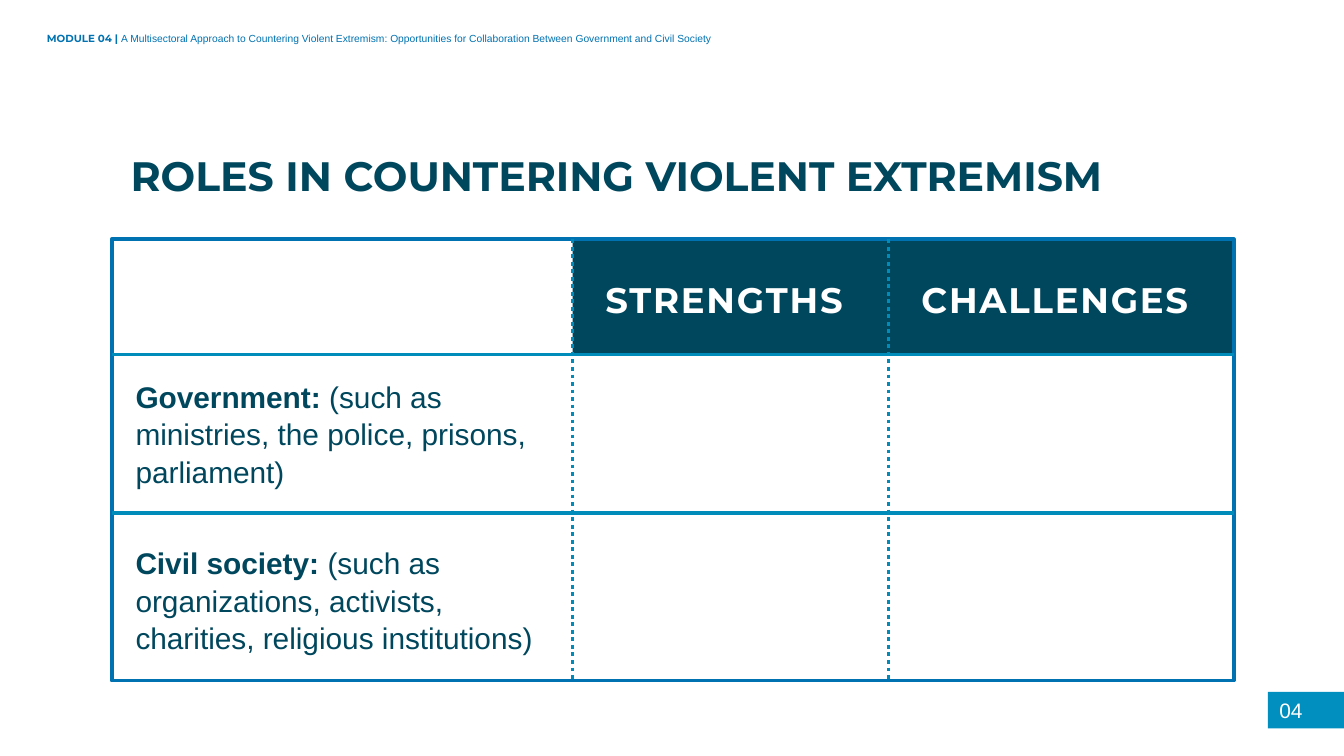
from dataclasses import dataclass

from lxml import etree
from pptx import Presentation
from pptx.dml.color import RGBColor
from pptx.enum.dml import MSO_LINE
from pptx.enum.shapes import MSO_CONNECTOR, MSO_SHAPE
from pptx.enum.text import MSO_ANCHOR, MSO_AUTO_SIZE
from pptx.oxml.ns import qn
from pptx.util import Pt

RECTANGLE = MSO_SHAPE.RECTANGLE
STRAIGHT = MSO_CONNECTOR.STRAIGHT
DOTTED = MSO_LINE.ROUND_DOT
TOP, BOTTOM = MSO_ANCHOR.TOP, MSO_ANCHOR.BOTTOM
GROW = MSO_AUTO_SIZE.SHAPE_TO_FIT_TEXT


@dataclass(frozen=True)
class Theme:
    """Colours, fonts and type sizes of the slide."""
    navy: str = "00475D"
    blue: str = "0072B1"
    teal: str = "008CBA"
    badge: str = "008FBE"
    white: str = "FFFFFF"
    heading_font: str = "Montserrat"
    body_font: str = "Arial"
    title_size: float = 22
    column_size: float = 19
    role_size: float = 16
    number_size: float = 11.2
    module_size: float = 5.5
    rule_width: float = 2


THEME = Theme()


def add_rectangle(slide, box, fill=None, outline=None):
    """Add a plain rectangle with a fill, an outline or both."""
    rectangle = slide.shapes.add_shape(RECTANGLE, *map(Pt, box))
    rectangle.shadow.inherit = False
    if fill:
        rectangle.fill.solid()
        rectangle.fill.fore_color.rgb = RGBColor.from_string(fill)
    else:
        rectangle.fill.background()
    if outline:
        rectangle.line.color.rgb = RGBColor.from_string(outline)
        rectangle.line.width = Pt(THEME.rule_width)
    else:
        rectangle.line.fill.background()


def add_rule(slide, start, end, dash=None):
    """Add a straight rule between two points."""
    rule = slide.shapes.add_connector(STRAIGHT, *map(Pt, (*start, *end)))
    rule.line.color.rgb = RGBColor.from_string(THEME.teal)
    rule.line.width = Pt(THEME.rule_width)
    if dash:
        rule.line.dash_style = dash
    etree.SubElement(rule._element.spPr, qn("a:effectLst"))


def add_text(slide, box, text, *, size, color, lead="", font=THEME.body_font,
             lead_font=THEME.body_font, bold=False, tracking=None,
             line_spacing=None, insets=(0, 0), anchor=BOTTOM, autosize=GROW):
    """Add a text box whose optional bold lead comes before the text."""
    frame = slide.shapes.add_textbox(*map(Pt, box)).text_frame
    frame.word_wrap = True
    frame.auto_size = autosize
    frame.vertical_anchor = anchor
    frame.margin_left = frame.margin_right = Pt(insets[0])
    frame.margin_top = frame.margin_bottom = Pt(insets[1])
    paragraph = frame.paragraphs[0]
    if line_spacing:
        paragraph.line_spacing = line_spacing
    for words, face, weight in ((lead, lead_font, True), (text, font, bold)):
        if not words:
            continue
        run = paragraph.add_run()
        run.text = words
        run.font.name = face
        run.font.size = Pt(size)
        run.font.bold = weight
        run.font.color.rgb = RGBColor.from_string(color)
        if tracking:
            run.font._element.set("spc", str(tracking * 100))


def add_roles_grid(slide):
    """Draw the grid of roles with its headings and row labels."""
    left, strengths, challenges, right = 59.8, 306.7, 476, 661
    top, government, society, bottom = 128.2, 190, 275, 364.6
    add_rectangle(slide, (strengths, top, right - strengths, government - top),
                  fill=THEME.navy)
    add_rectangle(slide, (left, top, right - left, bottom - top),
                  outline=THEME.blue)
    for row in (government, society):
        add_rule(slide, (left, row), (right, row))
    for column in (strengths, challenges):
        add_rule(slide, (column, top), (column, bottom), dash=DOTTED)

    headings = ((strengths, "STRENGTHS"), (challenges, "CHALLENGES"))
    for column, heading in headings:
        add_text(slide, (column + 17.6, 149, 156, 23), heading,
                 size=THEME.column_size, color=THEME.white,
                 font=THEME.heading_font, bold=True, tracking=1)

    roles = (
        (203.8, "Government: ",
         "(such as ministries, the police, prisons, parliament)"),
        (293, "Civil society: ",
         "(such as organizations, activists, charities, religious institutions)"),
    )
    for label_top, role, examples in roles:
        add_text(slide, (left + 12.8, label_top, 226, 58.3), examples,
                 lead=role, size=THEME.role_size, color=THEME.navy,
                 line_spacing=1.05)


def add_page_number(slide):
    """Draw the page number in the corner."""
    add_rectangle(slide, (679.2, 370.6, 40.8, 19.6), fill=THEME.badge)
    add_text(slide, (685.4, 373.7, 34.6, 13.7), "04",
             size=THEME.number_size, color=THEME.white)


def main():
    """Build the slide and save it."""
    deck = Presentation()
    deck.slide_width, deck.slide_height = Pt(720), Pt(405)
    slide = deck.slides.add_slide(deck.slide_layouts[6])
    add_text(slide, (70, 80.6, 580, 26.6),
             "ROLES IN COUNTERING VIOLENT EXTREMISM", size=THEME.title_size,
             color=THEME.navy, font=THEME.heading_font, bold=True)
    add_roles_grid(slide)
    add_page_number(slide)
    add_text(slide, (18, 13.7, 510.5, 11.5),
             "A Multisectoral Approach to Countering Violent Extremism: "
             "Opportunities for Collaboration Between Government and Civil Society",
             lead="MODULE 04 | ", lead_font=THEME.heading_font,
             size=THEME.module_size, color=THEME.blue, insets=(7.2, 3.6),
             anchor=TOP, autosize=MSO_AUTO_SIZE.NONE)
    deck.save("out.pptx")


if __name__ == "__main__":
    main()
